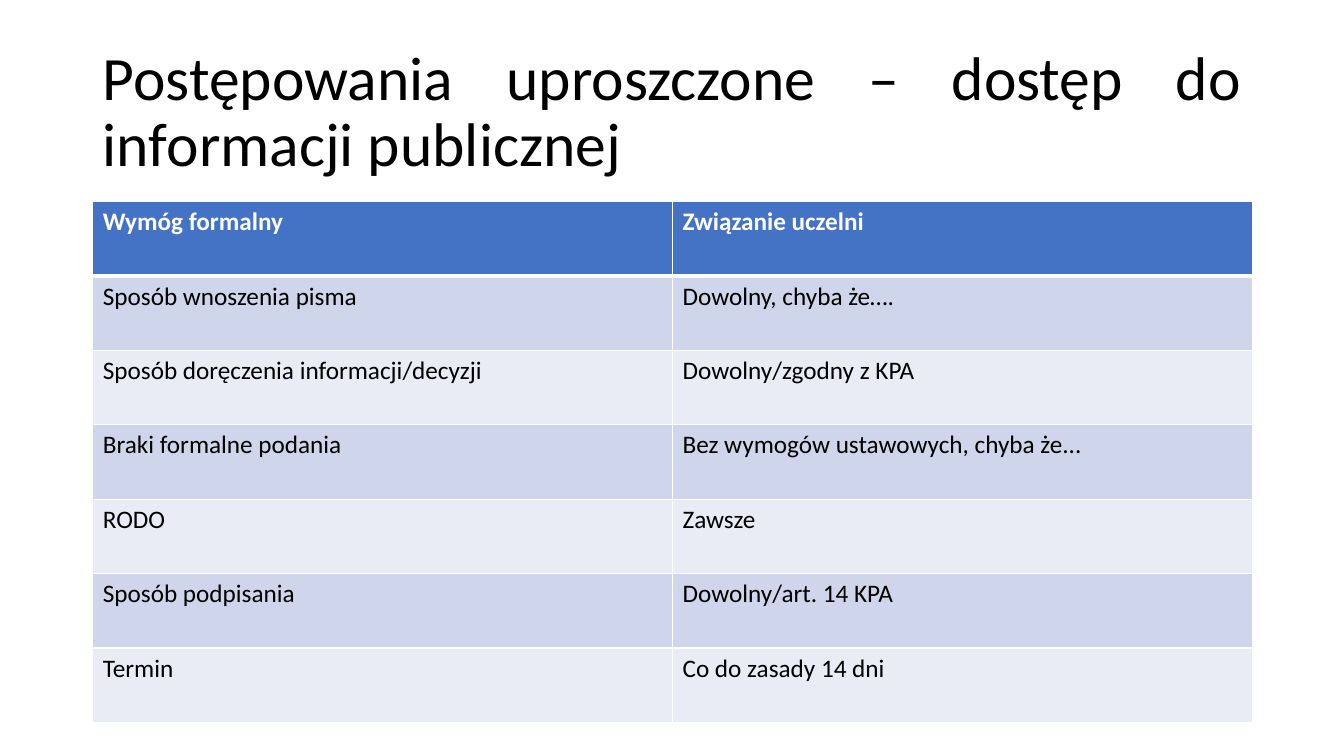
from dataclasses import dataclass

from lxml import etree
from pptx import Presentation
from pptx import util as u
from pptx.dml.color import RGBColor
from pptx.enum import text
from pptx.oxml import ns


@dataclass(frozen=True)
class Theme:
    font: str = "Calibri"
    ink: str = "000000"
    white: str = "FFFFFF"
    head: str = "4472C4"
    bands: tuple = ("CFD5EA", "E9EBF5")
    title: int = 44
    body: int = 18
    thin: int = 1
    thick: int = 3


THEME = Theme()
WIDE, HIGH = u.Inches(13.33), u.Inches(7.5)
LEFT, SPAN = u.Inches(0.92), u.Inches(11.5)

TITLE = "Postępowania uproszczone – dostęp do informacji publicznej"
ROWS = [
    ("Wymóg formalny", "Związanie uczelni"),
    ("Sposób wnoszenia pisma", "Dowolny, chyba że…."),
    ("Sposób doręczenia informacji/decyzji", "Dowolny/zgodny z KPA"),
    ("Braki formalne podania", "Bez wymogów ustawowych, chyba że..."),
    ("RODO", "Zawsze"),
    ("Sposób podpisania", "Dowolny/art. 14 KPA"),
    ("Termin", "Co do zasady 14 dni"),
]


def add_run(para, words, size, color, bold=False):
    run = para.add_run()
    run.text = words
    font = run.font
    font.name, font.size, font.bold = THEME.font, u.Pt(size), bold
    font.color.rgb = RGBColor.from_string(color)


def add_edge(cell, side, width):
    props = cell._tc.get_or_add_tcPr()
    line = etree.SubElement(props, ns.qn("a:ln" + side), w=str(u.Pt(width)))
    fill = etree.SubElement(line, ns.qn("a:solidFill"))
    etree.SubElement(fill, ns.qn("a:srgbClr"), val=THEME.white)


def fill_cell(cell, words, row):
    head = row == 0
    # Borders, with a thick rule under the header
    thick = {(0, "B"), (1, "T")}
    for side in "LRTB":
        add_edge(cell, side, THEME.thick if (row, side) in thick else THEME.thin)
    cell.fill.solid()
    shade = THEME.head if head else THEME.bands[(row - 1) % 2]
    cell.fill.fore_color.rgb = RGBColor.from_string(shade)
    color = THEME.white if head else THEME.ink
    add_run(cell.text_frame.paragraphs[0], words, THEME.body, color, head)


def set_title(slide):
    title = slide.shapes.title
    title.left, title.top = LEFT, u.Inches(0.4)
    title.width, title.height = SPAN, u.Inches(1.45)
    frame = title.text_frame
    frame.word_wrap = True
    frame.auto_size = text.MSO_AUTO_SIZE.NONE
    frame.vertical_anchor = text.MSO_ANCHOR.MIDDLE
    para = frame.paragraphs[0]
    para.alignment = text.PP_ALIGN.JUSTIFY
    para.line_spacing = 0.9
    add_run(para, TITLE, THEME.title, THEME.ink)


def add_grid(slide):
    frame = slide.shapes.add_table(
        len(ROWS), len(ROWS[0]), LEFT, u.Inches(2), SPAN, u.Inches(5.17))
    for row, pair in enumerate(ROWS):
        for col, words in enumerate(pair):
            fill_cell(frame.table.cell(row, col), words, row)


def main():
    deck = Presentation()
    deck.slide_width, deck.slide_height = WIDE, HIGH
    # Title-only layout
    slide = deck.slides.add_slide(deck.slide_layouts[5])
    set_title(slide)
    add_grid(slide)
    deck.save("out.pptx")


if __name__ == "__main__":
    main()
